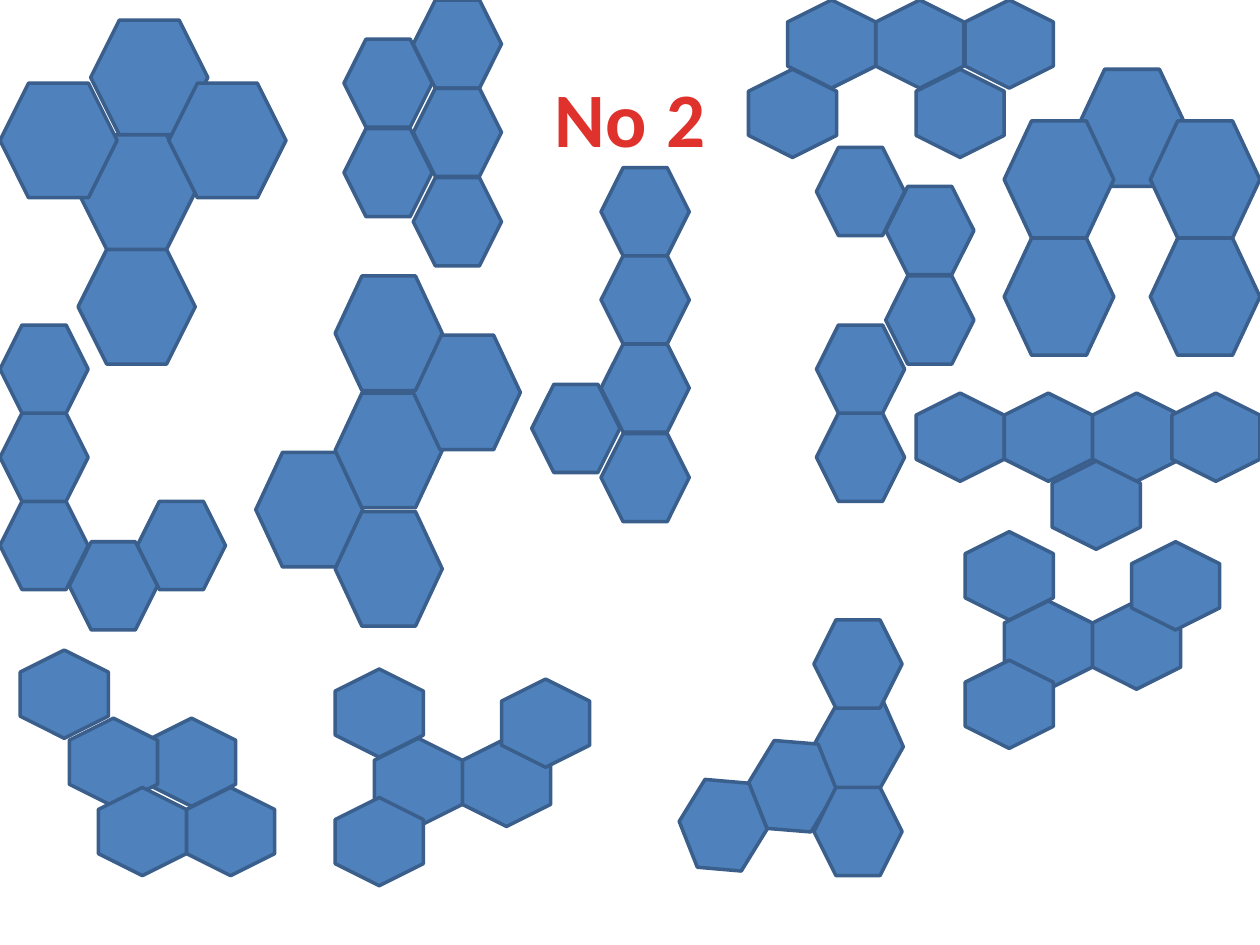
import pptx
import pptx.util
import pptx.dml.color
import pptx.enum.shapes
import pptx.enum.text

Inches = pptx.util.Inches
Pt = pptx.util.Pt
RGBColor = pptx.dml.color.RGBColor

BLUE = RGBColor(0x4F, 0x81, 0xBD)
EDGE = RGBColor(0x3A, 0x5F, 0x8C)
RED = RGBColor(0xE0, 0x32, 0x2D)

SIDE = (0.7, 0.7)
FORK = [(3.67, 5.86), (3.98, 5.39), (2.97, 5.86), (2.66, 6.33), (2.66, 5.31)]

NETS = [
    (SIDE, 90, [(8.67, 3.12), (8.35, 3.66), (7.27, 3.12), (9.3, 3.12), (7.97, 3.12)]),
    (SIDE, 0, [(7.03, 1.48), (6.48, 3.28), (6.48, 2.58), (6.48, 1.17), (7.03, 2.19)]),
    ((0.87, 0.93), 0, [(8.55, 0.55), (9.13, 0.96), (7.97, 1.89), (7.97, 0.96), (9.13, 1.89)]),
    ((0.93, 0.91), 0, [(0.72, 0.16), (0.62, 1.98), (0.62, 1.07), (0, 0.66), (1.34, 0.66)]),
    (SIDE, 90, [(6.95, 0), (7.27, 0.55), (5.94, 0.55), (7.66, 0), (6.25, 0)]),
    ((0.85, 0.91), 0, [(2.03, 3.59), (2.66, 3.12), (3.28, 2.66), (2.66, 2.19), (2.66, 4.06)]),
    (SIDE, 180, [(4.77, 1.33), (4.22, 3.05), (4.77, 3.44), (4.77, 2.03), (4.77, 2.73)]),
    (SIDE, 180, [(3.28, 0), (3.28, 0.7), (2.73, 1.02), (3.28, 1.41), (2.73, 0.31)]),
    (SIDE, 0, [(0, 3.98), (0, 3.28), (1.09, 3.98), (0, 2.58), (0.55, 4.3)]),
    (SIDE, 90, [(x + 5, y - 1.09) for x, y in FORK]),
    (SIDE, 90, [(1.17, 5.7), (1.48, 6.25), (0.55, 5.7), (0.78, 6.25), (0.16, 5.16)]),
    (SIDE, 90, FORK),
    (SIDE, 0, [(6.47, 5.56, 2.7), (5.94, 5.89, 184.7), (5.39, 6.2, 5), (6.46, 4.92), (6.46, 6.25)]),
]


def add_title(slide, text):
    title = slide.shapes.title
    title.left, title.top = Inches(0.5), Inches(0.3)
    title.width, title.height = Inches(9), Inches(1.25)
    frame = title.text_frame
    frame.vertical_anchor = pptx.enum.text.MSO_ANCHOR.MIDDLE
    para = frame.paragraphs[0]
    para.alignment = pptx.enum.text.PP_ALIGN.CENTER
    run = para.add_run()
    run.text = text
    run.font.name = "Calibri"
    run.font.size = Pt(44)
    run.font.bold = True
    run.font.color.rgb = RED
    run._r.get_or_add_rPr().set("spc", "50")


def add_hex(group, size, x, y, turn):
    kind = pptx.enum.shapes.MSO_SHAPE.HEXAGON
    shape = group.shapes.add_shape(kind, Inches(x), Inches(y), *map(Inches, size))
    shape.rotation = turn
    shape.shadow.inherit = False
    shape.fill.solid()
    shape.fill.fore_color.rgb = BLUE
    shape.line.color.rgb = EDGE
    shape.line.width = Pt(2)


def add_net(slide, size, turn, cells):
    group = slide.shapes.add_group_shape()
    for x, y, *own in cells:
        add_hex(group, size, x, y, own[0] if own else turn)


def main():
    deck = pptx.Presentation()
    deck.slide_width, deck.slide_height = Inches(10), Inches(7.5)
    slide = deck.slides.add_slide(deck.slide_layouts[5])
    add_title(slide, "No 2")
    for size, turn, cells in NETS:
        add_net(slide, size, turn, cells)
    deck.save("out.pptx")


if __name__ == "__main__":
    main()
